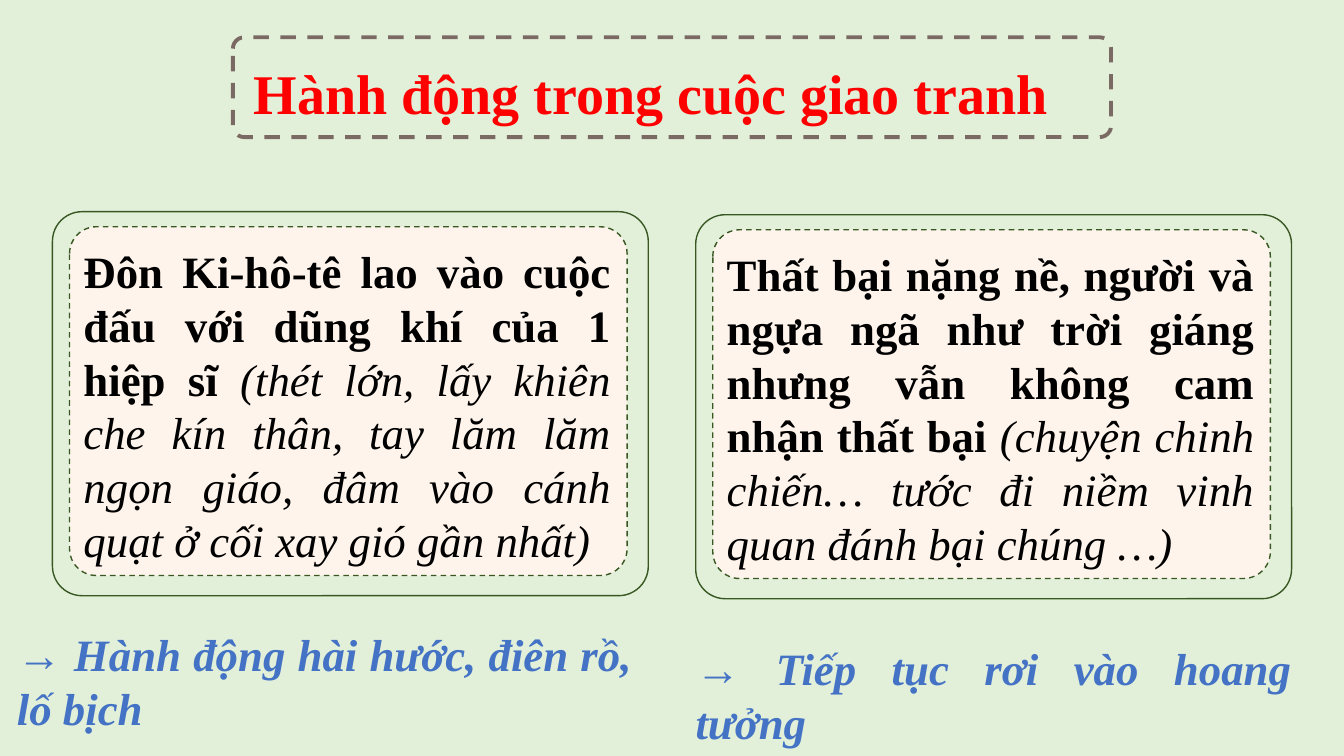
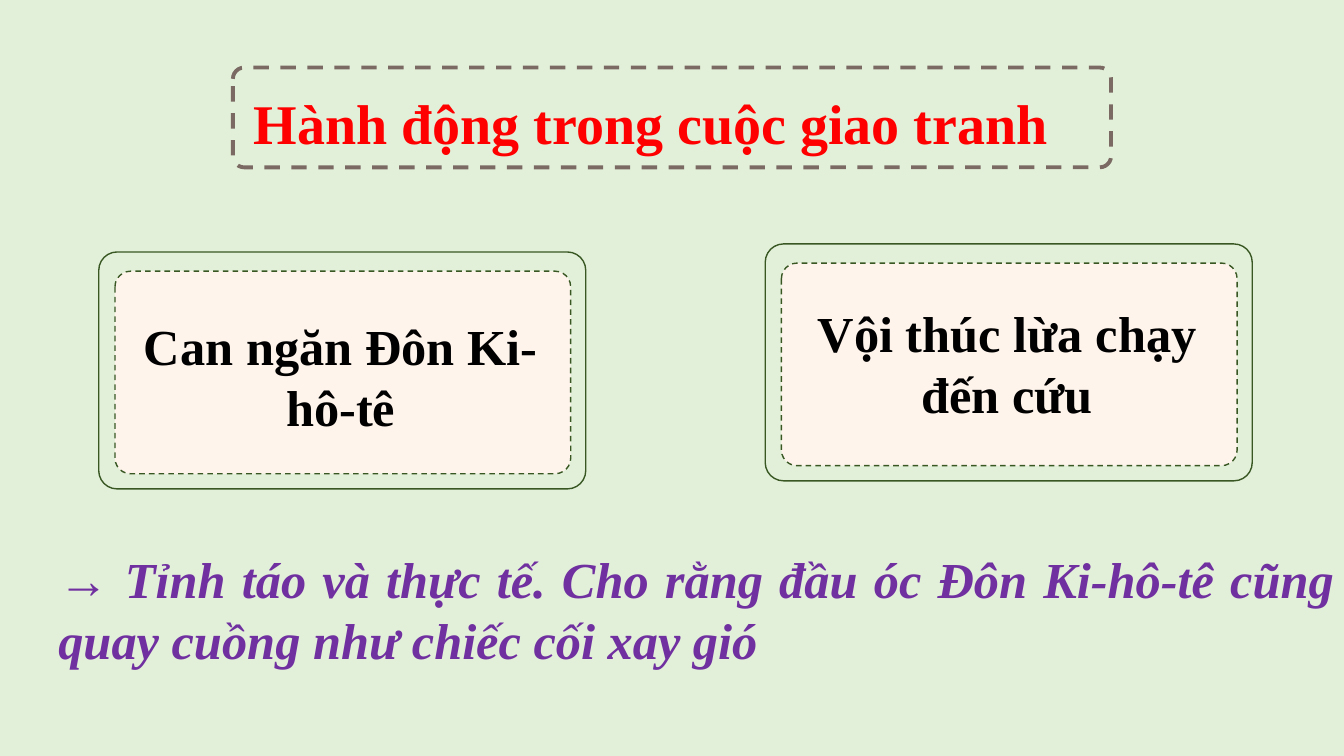
from pptx import Presentation
from pptx.dml.color import RGBColor
from pptx.enum.dml import MSO_LINE
from pptx.enum.shapes import MSO_SHAPE
from pptx.enum.text import MSO_ANCHOR, PP_ALIGN
from pptx.util import Inches, Pt

ROUND = MSO_SHAPE.ROUNDED_RECTANGLE
DASH = MSO_LINE.DASH
MIDDLE, TOP = MSO_ANCHOR.MIDDLE, MSO_ANCHOR.TOP
LEFT, CENTER, JUSTIFY = PP_ALIGN.LEFT, PP_ALIGN.CENTER, PP_ALIGN.JUSTIFY

GREEN = RGBColor(0xE2, 0xF0, 0xD9)
CREAM = RGBColor(0xFE, 0xF4, 0xEC)
FOREST = RGBColor(0x38, 0x57, 0x23)
BROWN = RGBColor(0x7B, 0x6A, 0x63)
RED = RGBColor(0xFF, 0x00, 0x00)
BLACK = RGBColor(0x00, 0x00, 0x00)
BLUE = RGBColor(0x44, 0x72, 0xC4)
PURPLE = RGBColor(0x70, 0x30, 0xA0)
FONT = "Times New Roman"
TITLE = "Hành động trong cuộc giao tranh"


def add_frame(slide, box, line, weight, fill=None, dash=None, bend=0.077):
    frame = slide.shapes.add_shape(ROUND, *map(Inches, box))
    frame.shadow.inherit = False
    frame.adjustments[0] = bend
    if fill is None:
        frame.fill.background()
    else:
        frame.fill.solid()
        frame.fill.fore_color.rgb = fill
    frame.line.color.rgb = line
    frame.line.width = Pt(weight)
    if dash is not None:
        frame.line.dash_style = dash


def add_text(slide, box, bold, size, color, align, italic=False, aside="", anchor=TOP):
    frame = slide.shapes.add_textbox(*map(Inches, box)).text_frame
    frame.word_wrap = True
    frame.vertical_anchor = anchor
    para = frame.paragraphs[0]
    para.alignment = align
    font = para.font
    font.name, font.size, font.color.rgb = FONT, Pt(size), color
    if not aside:
        font.bold, font.italic = True, italic
    for text, strong in ((bold, True), (aside, False)):
        if text:
            run = para.add_run()
            run.text = text
            if aside:
                run.font.bold, run.font.italic = strong, not strong


def add_title(slide, top):
    add_frame(slide, (2.31, top, 8.71, 0.99), BROWN, 2.75, dash=DASH, bend=0.113)
    add_text(slide, (2.42, top + 0.11, 8.48, 0.87), TITLE, 40, RED, LEFT, anchor=MIDDLE)


def add_card(slide, box, inner, words, bold, size, align, aside=""):
    left, top = box[:2]

    def shift(part):
        return left + part[0], top + part[1], *part[2:]

    add_frame(slide, box, FOREST, 1, GREEN)
    add_frame(slide, shift(inner), FOREST, 1, CREAM, DASH)
    add_text(slide, shift(words), bold, size, BLACK, align, aside=aside)


def new_slide(deck, top):
    slide = deck.slides.add_slide(deck.slide_layouts[6])
    fill = slide.background.fill
    fill.solid()
    fill.fore_color.rgb = GREEN
    add_title(slide, top)
    return slide


def add_knight(deck):
    slide = new_slide(deck, 0.37)
    cards = (
        (0.52, 2.1, "Đôn Ki-hô-tê lao vào cuộc đấu với dũng khí của 1 hiệp sĩ ",
         "(thét lớn, lấy khiên che kín thân, tay lăm lăm ngọn giáo, "
         "đâm vào cánh quạt ở cối xay gió gần nhất)"),
        (6.9, 2.13, "Thất bại nặng nề, người và ngựa ngã như trời giáng "
         "nhưng vẫn không cam nhận thất bại ",
         "(chuyện chinh chiến… tước đi niềm vinh quan đánh bại chúng …)"),
    )
    for left, top, bold, aside in cards:
        add_card(slide, (left, top, 5.91, 3.81), (0.17, 0.15, 5.53, 3.46),
                 (0.21, 0.27, 5.43, 3.33), bold, 32, JUSTIFY, aside)
    notes = (
        ((0.07, 6.17, 6.3, 1.18), "→ Hành động hài hước, điên rồ, lố bịch"),
        ((6.8, 6.31, 6.11, 1.18), "→ Tiếp tục rơi vào hoang tưởng"),
    )
    for box, text in notes:
        add_text(slide, box, text, 32, BLUE, JUSTIFY, True)


def add_squire(deck):
    slide = new_slide(deck, 0.67)
    cards = (
        (0.98, 2.5, 0.58, "Can ngăn Đôn Ki-hô-tê"),
        (7.59, 2.42, 0.53, "Vội thúc lừa chạy đến cứu"),
    )
    for left, top, drop, text in cards:
        add_card(slide, (left, top, 4.83, 2.35), (0.16, 0.19, 4.52, 2.01),
                 (0.18, drop, 4.44, 1.31), text, 36, CENTER)
    add_text(slide, (0.48, 5.39, 12.86, 1.31),
             "→ Tỉnh táo và thực tế. Cho rằng đầu óc Đôn Ki-hô-tê cũng "
             "quay cuồng như chiếc cối xay gió", 36, PURPLE, JUSTIFY, True)


def main():
    deck = Presentation()
    deck.slide_width, deck.slide_height = Inches(13.33), Inches(7.5)
    add_knight(deck)
    add_squire(deck)
    deck.save("out.pptx")


if __name__ == "__main__":
    main()
